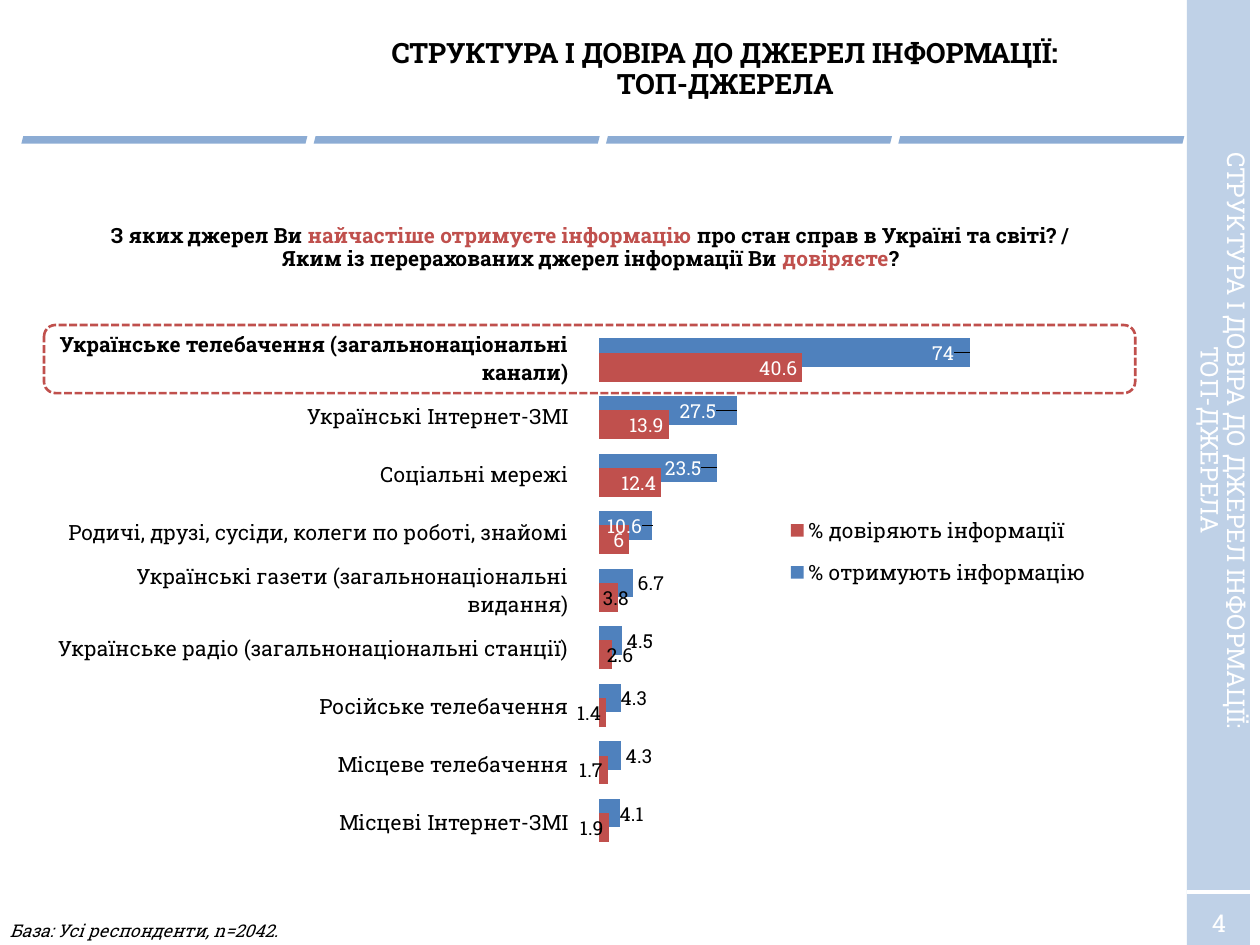
from lxml.etree import SubElement
from pptx import Presentation
from pptx.chart.data import CategoryChartData
from pptx.dml.color import RGBColor
from pptx.enum.chart import XL_CHART_TYPE, XL_LABEL_POSITION as Spot, XL_LEGEND_POSITION
from pptx.enum.dml import MSO_LINE
from pptx.enum.shapes import MSO_CONNECTOR, MSO_SHAPE as Shape
from pptx.enum.text import MSO_ANCHOR as Anchor, MSO_AUTO_SIZE, PP_ALIGN as Align
from pptx.oxml import parse_xml
from pptx.oxml.ns import nsdecls, qn
from pptx.util import Inches, Pt

FONT = "Roboto Slab"
BLACK = RGBColor(0x00, 0x00, 0x00)
WHITE = RGBColor(0xFF, 0xFF, 0xFF)
BLUE = RGBColor(0x4F, 0x81, 0xBD)
PALE_BLUE = RGBColor(0x95, 0xB3, 0xD7)
RED = RGBColor(0xC0, 0x50, 0x4D)

TITLE = "СТРУКТУРА І ДОВІРА ДО ДЖЕРЕЛ ІНФОРМАЦІЇ:\nТОП-ДЖЕРЕЛА"
QUESTION = [
    ("З яких джерел Ви ", BLACK),
    ("найчастіше отримуєте інформацію ", RED),
    ("про стан справ в Україні та світі? / Яким із перерахованих джерел інформації Ви ", BLACK),
    ("довіряєте", RED),
    ("?", BLACK),
]
BASE = "База: Усі респонденти, n=2042."
SOURCES = [
    ("Українське телебачення (загальнонаціональні канали)", 74, 40.6),
    ("Українські Інтернет-ЗМІ", 27.5, 13.9),
    ("Соціальні мережі", 23.5, 12.4),
    ("Родичі, друзі, сусіди, колеги по роботі, знайомі", 10.6, 6),
    ("Українські газети (загальнонаціональні видання)", 6.7, 3.8),
    ("Українське радіо (загальнонаціональні станції)", 4.5, 2.6),
    ("Російське телебачення", 4.3, 1.4),
    ("Місцеве телебачення", 4.3, 1.7),
    ("Місцеві Інтернет-ЗМІ", 4.1, 1.9),
]
SERIES = [
    ("% отримують інформацію", BLUE, BLACK, Spot.OUTSIDE_END),
    ("% довіряють інформації ", RED, WHITE, Spot.INSIDE_END),
]
LABEL_CHANGES = [
    {0: (WHITE, Spot.INSIDE_END, -0.02), 1: (WHITE, Spot.INSIDE_END, -0.03),
     2: (WHITE, Spot.INSIDE_END, -0.02), 3: (WHITE, Spot.INSIDE_END, -0.01),
     6: (BLACK, Spot.OUTSIDE_END, -0.01), 8: (BLACK, Spot.OUTSIDE_END, -0.01)},
    {4: (BLACK, Spot.INSIDE_END, 0.03), 5: (BLACK, Spot.INSIDE_END, 0.05),
     6: (BLACK, Spot.INSIDE_END, 0), 7: (BLACK, Spot.INSIDE_END, 0),
     8: (BLACK, Spot.INSIDE_END, 0)},
]


def inches(*values):
    return [Inches(value) for value in values]


def set_font(font, size, color=BLACK, bold=False, italic=False):
    font.name, font.size, font.bold, font.italic = FONT, Pt(size), bold, italic
    font.color.rgb = color


def write(frame, text, size=12, color=BLACK, bold=False, italic=False,
          align=Align.LEFT, anchor=Anchor.TOP, spacing=None):
    frame.word_wrap = True
    frame.vertical_anchor = anchor
    para = frame.paragraphs[0]
    para.alignment = align
    para.line_spacing = spacing
    spans = [(text, color)] if isinstance(text, str) else text
    for words, shade in spans:
        for number, line in enumerate(words.split("\n")):
            if number:
                para.add_line_break()
            span = para.add_run()
            span.text = line
            set_font(span.font, size, shade, bold, italic)


def add_text(page, place, text, **style):
    box = page.shapes.add_textbox(*inches(*place))
    write(box.text_frame, text, **style)
    return box


def add_panel(page, kind, place, color, opacity):
    panel = page.shapes.add_shape(kind, *inches(*place))
    panel.shadow.inherit = False
    panel.line.fill.background()
    panel.fill.solid()
    panel.fill.fore_color.rgb = color
    shade = panel._element.spPr.find(".//" + qn("a:srgbClr"))
    SubElement(shade, qn("a:alpha"), val=str(opacity * 1000))


def manual_layout(**values):
    items = "".join(f'<c:{name} val="{value}"/>' for name, value in values.items())
    return parse_xml(f'<c:layout {nsdecls("c")}><c:manualLayout>{items}'
                     "</c:manualLayout></c:layout>")


def add_source_table(page):
    frame = page.shapes.add_table(len(SOURCES), 2, *inches(0.35, 2.61, 8.74, 4.14))
    table = frame.table
    table.first_row = table.horz_banding = False
    table.columns[0].width, table.columns[1].width = inches(4.17, 4.57)
    for number, (name, *_) in enumerate(SOURCES):
        table.rows[number].height = Inches(0.46)
        for cell in table.rows[number].cells:
            cell.fill.background()
            cell.vertical_anchor = Anchor.MIDDLE
            cell.margin_left = cell.margin_right = cell.margin_top = Inches(0.01)
            cell.margin_bottom = 0
        write(table.cell(number, 0).text_frame, name, bold=number == 0,
              align=Align.RIGHT, anchor=Anchor.MIDDLE)


def add_trust_chart(page):
    data = CategoryChartData()
    data.categories = [str(number + 1) for number in range(len(SOURCES))]
    for column, (name, *_) in enumerate(SERIES, 1):
        data.add_series(name, [row[column] for row in SOURCES])
    chart = page.shapes.add_chart(XL_CHART_TYPE.BAR_CLUSTERED,
                                  *inches(4.58, 2.63, 4.15, 4.11), data).chart
    set_font(chart.font, 14)
    chart.has_title = False
    chart.category_axis.visible = chart.value_axis.visible = False
    chart.category_axis.reverse_order = True
    chart.value_axis.has_major_gridlines = False
    chart.value_axis.minimum_scale, chart.value_axis.maximum_scale = 0, 100

    plot = chart.plots[0]
    plot.gap_width = plot.overlap = 50
    plot.vary_by_categories = False
    area = chart._chartSpace.chart.plotArea
    for old in area.findall(qn("c:layout")):
        area.remove(old)
    area.insert(0, manual_layout(layoutTarget="inner", xMode="edge", yMode="edge",
                                 x=0.04, y=0, w=0.96, h=1))

    for series, (_, fill, color, spot), changes in zip(plot.series, SERIES, LABEL_CHANGES):
        series.format.fill.solid()
        series.format.fill.fore_color.rgb = fill
        labels = series.data_labels
        labels.show_value = True
        labels.position = spot
        set_font(labels.font, 11, color)
        for index, (shade, place, shift) in changes.items():
            label = series.points[index].data_label
            set_font(label.font, 11, shade)
            label.position = place
            if shift:
                element = label._dLbl
                element.insert(1, manual_layout(x=shift, y=0))

    chart.has_legend = True
    legend = chart.legend
    legend.position = XL_LEGEND_POSITION.RIGHT
    legend.include_in_layout = False
    set_font(legend.font, 12)
    legend._element.find(qn("c:legendPos")).addnext(
        manual_layout(xMode="edge", yMode="edge", x=0.4, y=0.33, w=0.58, h=0.19))


def main():
    deck = Presentation()
    deck.slide_width, deck.slide_height = inches(10, 7.5)
    page = deck.slides.add_slide(deck.slide_layouts[5])

    add_panel(page, Shape.RECTANGLE, (9.42, 0, 0.5, 7.5), PALE_BLUE, 60)
    for number in range(4):
        add_panel(page, Shape.PARALLELOGRAM, (0.17 + 2.32 * number, 1.08, 2.27, 0.06), BLUE, 65)
    add_text(page, (9.38, 7.15, 0.59, 0.34), "4", size=14, color=WHITE,
             align=Align.CENTER, anchor=Anchor.MIDDLE)
    divider = page.shapes.add_connector(MSO_CONNECTOR.STRAIGHT, *inches(9.42, 7.08, 9.92, 7.08))
    divider.line.color.rgb = WHITE
    divider.line.width = Pt(2)
    SubElement(divider._element.spPr, qn("a:effectLst"))

    title = page.shapes.title
    title.left, title.top, title.width, title.height = inches(2.17, 0.18, 7.17, 0.75)
    title.text_frame.auto_size = MSO_AUTO_SIZE.NONE
    write(title.text_frame, TITLE, size=16, bold=True, align=Align.CENTER,
          anchor=Anchor.MIDDLE, spacing=0.9)
    sidebar = add_text(page, (6.92, 3.21, 5.5, 0.57), TITLE, size=14, color=WHITE,
                       align=Align.CENTER, spacing=0.9)
    sidebar.rotation = 90

    add_source_table(page)
    highlight = page.shapes.add_shape(Shape.ROUNDED_RECTANGLE, *inches(0.35, 2.58, 8.66, 0.54))
    highlight.shadow.inherit = False
    highlight.fill.background()
    highlight.line.color.rgb = RED
    highlight.line.width = Pt(1.5)
    highlight.line.dash_style = MSO_LINE.SQUARE_DOT
    add_text(page, (0.63, 1.74, 8.11, 0.5), QUESTION, bold=True, align=Align.CENTER, spacing=0.9)
    add_trust_chart(page)
    add_text(page, (-0.02, 7.25, 9.42, 0.27), BASE, size=10, italic=True)
    deck.save("out.pptx")


if __name__ == "__main__":
    main()
